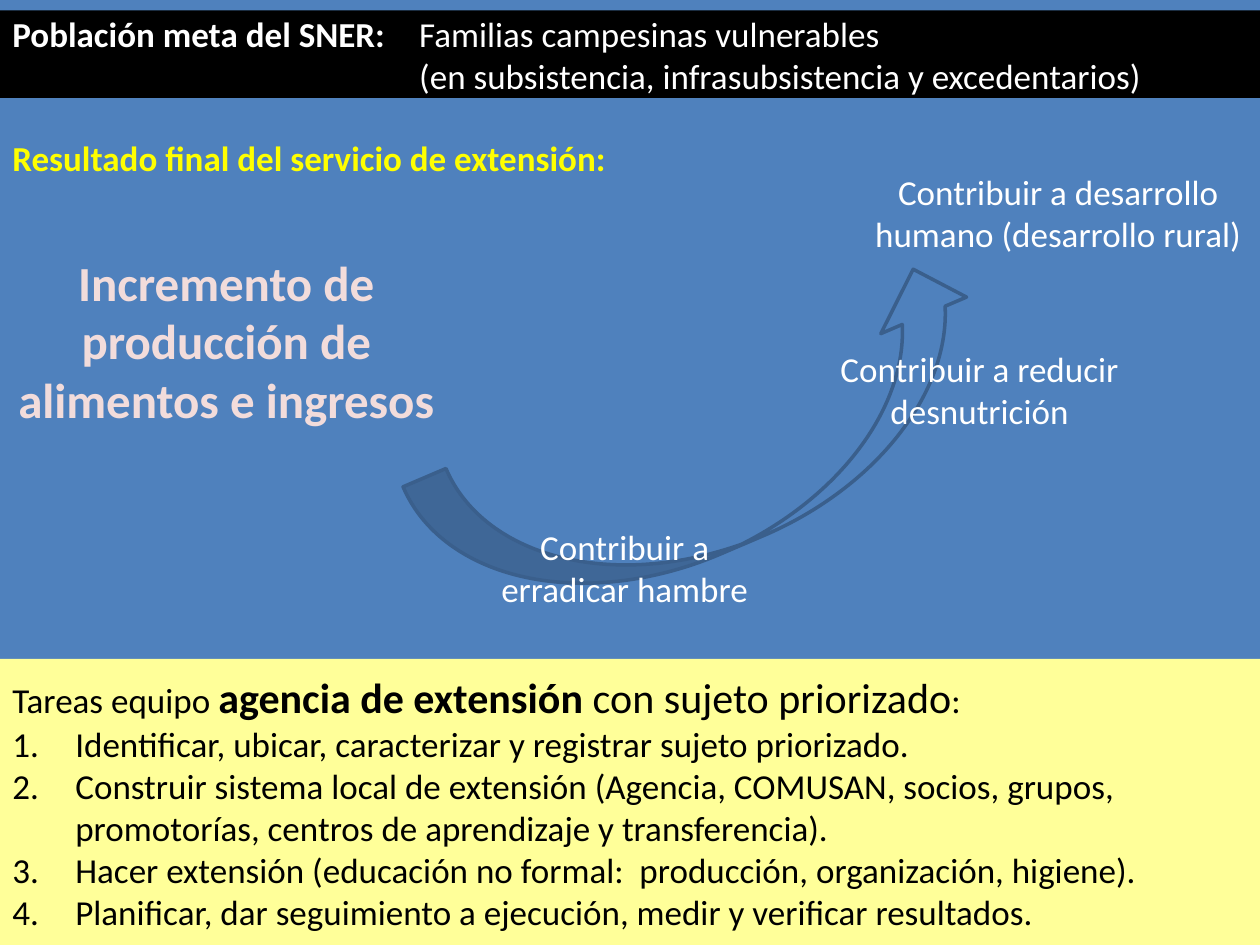
from dataclasses import dataclass
from typing import NamedTuple

from lxml.etree import SubElement
from pptx import Presentation
from pptx.dml.color import RGBColor as Color
from pptx.enum.shapes import MSO_SHAPE as Shape
from pptx.enum.text import MSO_ANCHOR as Anchor, PP_ALIGN as Align
from pptx.oxml.ns import qn
from pptx.util import Pt


@dataclass(frozen=True)
class Theme:
    font: str = "Calibri"
    blue: str = "4F81BD"
    outline: str = "3A5F8C"
    black: str = "000000"
    white: str = "FFFFFF"
    yellow: str = "FFFF00"
    cream: str = "FFFF99"
    rose: str = "F2DCDB"
    body: int = 20
    emphasis: int = 24
    headline: int = 28


THEME = Theme()
PAGE_WIDTH, PAGE_HEIGHT = 720, 540
TASKS_TOP = 376.5


class Area(NamedTuple):
    left: float
    top: float
    width: float
    height: float

    def lengths(self) -> list:
        return [Pt(value) for value in self]


class Span(NamedTuple):
    text: str
    bold: bool = False
    size: int = THEME.body


class Label(NamedTuple):
    area: Area
    text: str
    color: str = THEME.white
    size: int = THEME.body
    bold: bool = False
    align: Align = Align.CENTER


LABELS = [
    Label(Area(0, 67.5, PAGE_WIDTH, 45.5), "Resultado final del servicio de extensión:",
          THEME.yellow, bold=True, align=Align.LEFT),
    Label(Area(0, 132.5, 258.5, 124), "Incremento de producción de alimentos e ingresos",
          THEME.rose, THEME.headline, bold=True),
    Label(Area(450, 200, 219.5, 45.5), "Contribuir a reducir desnutrición"),
    Label(Area(489.5, 98.5, 230.5, 45.5), "Contribuir a desarrollo humano (desarrollo rural)"),
    Label(Area(264, 301.5, 186, 45.5), "Contribuir a erradicar hambre"),
]
TASKS_HEADING = [
    Span("Tareas equipo "),
    Span("agencia de extensión", True, THEME.emphasis),
    Span(" con sujeto priorizado", size=THEME.emphasis),
    Span(":"),
]
TASKS = [
    "Identificar, ubicar, caracterizar y registrar sujeto priorizado.",
    "Construir sistema local de extensión (Agencia, COMUSAN, socios, grupos, "
    "promotorías, centros de aprendizaje y transferencia).",
    "Hacer extensión (educación no formal:  producción, organización, higiene).",
    "Planificar, dar seguimiento a ejecución, medir y verificar resultados.",
]


def prepare_frame(box):
    frame = box.text_frame
    frame.word_wrap = True
    frame.vertical_anchor = Anchor.MIDDLE
    return frame


def write(para, spans: list[Span], *, color: str, align: Align = Align.LEFT,
          hanging: float = 0, numbered: bool = False) -> None:
    """Fill a paragraph; a vertical tab in a span breaks the line."""
    para.alignment = align
    properties = para._p.get_or_add_pPr()
    if hanging:
        properties.set("marL", str(Pt(hanging)))
        properties.set("indent", str(-Pt(hanging)))
    if numbered:
        SubElement(properties, qn("a:buAutoNum"), type="arabicPeriod")
    for span in spans:
        for index, line in enumerate(span.text.split("\v")):
            if index:
                para.add_line_break()
            run = para.add_run()
            run.text = line
            font = run.font
            font.name, font.size, font.bold = THEME.font, Pt(span.size), span.bold
            font.color.rgb = Color.from_string(color)


def add_filled(page, kind: Shape, area: Area, fill: str):
    shape = page.shapes.add_shape(kind, *area.lengths())
    shape.shadow.inherit = False
    shape.fill.solid()
    shape.fill.fore_color.rgb = Color.from_string(fill)
    shape.line.fill.background()
    return shape


def add_label(page, label: Label) -> None:
    box = page.shapes.add_textbox(*label.area.lengths())
    write(prepare_frame(box).paragraphs[0], [Span(label.text, label.bold, label.size)],
          color=label.color, align=label.align)


def add_title(page) -> None:
    band = add_filled(page, Shape.RECTANGLE, Area(0, 6, PAGE_WIDTH, 50), THEME.black)
    spans = [
        Span("Población meta del SNER:", bold=True),
        Span("\tFamilias campesinas vulnerables\v"
             "(en subsistencia, infrasubsistencia y excedentarios)"),
    ]
    write(prepare_frame(band).paragraphs[0], spans, color=THEME.white, hanging=232.5)


def add_growth_arrow(page) -> None:
    arrow = add_filled(page, Shape.CURVED_UP_ARROW, Area(237.5, 206.5, 343.5, 106.5), THEME.blue)
    arrow.rotation = 336.9
    arrow.line.color.rgb = Color.from_string(THEME.outline)
    arrow.line.width = Pt(2)


def add_tasks(page) -> None:
    area = Area(0, TASKS_TOP, PAGE_WIDTH, PAGE_HEIGHT - TASKS_TOP)
    frame = prepare_frame(add_filled(page, Shape.RECTANGLE, area, THEME.cream))
    write(frame.paragraphs[0], TASKS_HEADING, color=THEME.black)
    for task in TASKS:
        write(frame.add_paragraph(), [Span(task)], color=THEME.black,
              hanging=36, numbered=True)


def main() -> None:
    deck = Presentation()
    deck.slide_width, deck.slide_height = Pt(PAGE_WIDTH), Pt(PAGE_HEIGHT)
    page = deck.slides.add_slide(deck.slide_layouts[6])
    page.background.fill.solid()
    page.background.fill.fore_color.rgb = Color.from_string(THEME.blue)
    add_title(page)
    add_growth_arrow(page)
    for label in LABELS:
        add_label(page, label)
    add_tasks(page)
    deck.save("out.pptx")


if __name__ == "__main__":
    main()
